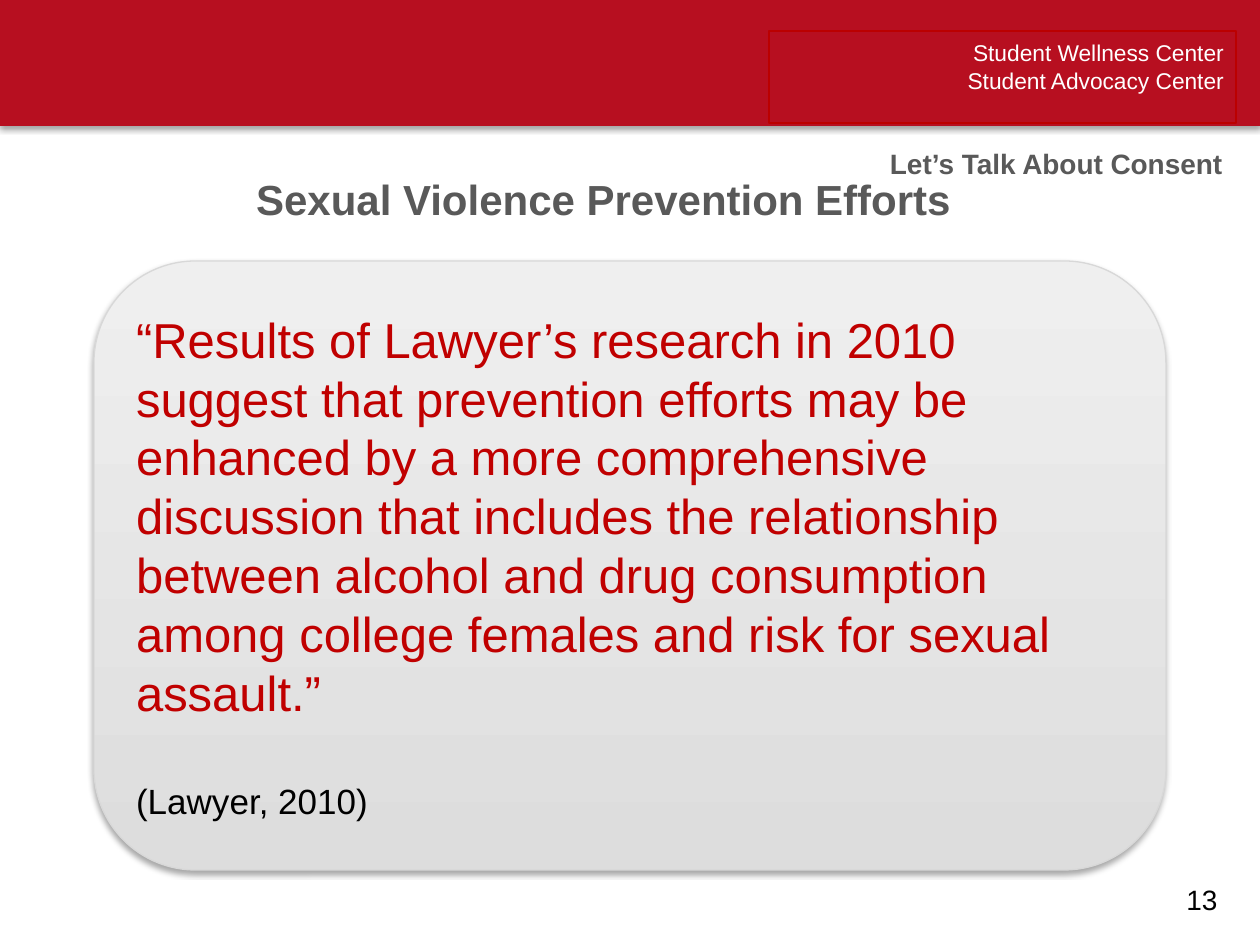
from lxml.etree import SubElement
from pptx import Presentation
from pptx.dml.color import RGBColor
from pptx.enum.shapes import MSO_SHAPE
from pptx.enum.text import MSO_ANCHOR, PP_ALIGN
from pptx.oxml.ns import qn
from pptx.util import Inches, Pt

SCALE = Inches(1) / 126
RED = RGBColor(0xB7, 0x0F, 0x20)
EDGE = RGBColor(0xBB, 0x00, 0x00)
QUOTE = RGBColor(0xC0, 0x00, 0x00)
GRAY = RGBColor(0x59, 0x59, 0x59)
RIM = RGBColor(0xD8, 0xD8, 0xD8)
DARK = RGBColor(0xDD, 0xDD, 0xDD)
LIGHT = RGBColor(0xEF, 0xEF, 0xEF)
WHITE = RGBColor(0xFF, 0xFF, 0xFF)
BLACK = RGBColor(0x00, 0x00, 0x00)


class Deck:
    face = "Arial"

    def __init__(self):
        self.show = Presentation()
        self.show.slide_width, self.show.slide_height = self.emu(1260, 945)
        self.slide = self.show.slides.add_slide(self.show.slide_layouts[6])

    def emu(self, *sizes):
        return [round(size * SCALE) for size in sizes]

    def style(self, para, size, color, bold=False, align=PP_ALIGN.LEFT, pitch=None):
        para.alignment = align
        if pitch:
            para.line_spacing = Pt(pitch)
        for run in para.runs:
            font = run.font
            font.name, font.size, font.bold = self.face, Pt(size), bold
            font.color.rgb = color

    def shape(self, kind, box, line=None):
        item = self.slide.shapes.add_shape(kind, *self.emu(*box))
        item.shadow.inherit = False
        item.fill.background()
        if line is None:
            item.line.fill.background()
        else:
            item.line.color.rgb = line
            item.line.width = Pt(0.75)
        return item

    def shade(self, item):
        effects = item._element.spPr.find(qn("a:effectLst"))
        outer = SubElement(effects, qn("a:outerShdw"), blurRad=str(Pt(3.1)),
                           dist=str(Pt(1.8)), dir="5400000", rotWithShape="0")
        color = SubElement(outer, qn("a:srgbClr"), val="000000")
        SubElement(color, qn("a:alpha"), val="35000")

    def band(self, box, color):
        item = self.shape(MSO_SHAPE.RECTANGLE, box)
        item.fill.solid()
        item.fill.fore_color.rgb = color
        self.shade(item)

    def label(self, box, text, size, color, line, align, bold=False):
        item = self.shape(MSO_SHAPE.RECTANGLE, box, line)
        frame = item.text_frame
        frame.word_wrap = True
        frame.vertical_anchor = MSO_ANCHOR.TOP
        frame.text = text
        for para in frame.paragraphs:
            self.style(para, size, color, bold, align, 16.4)

    def panel(self, box, quote, source):
        item = self.shape(MSO_SHAPE.ROUNDED_RECTANGLE, box, RIM)
        item.fill.gradient()
        item.fill.gradient_angle = 90
        for stop, color in zip(item.fill.gradient_stops, (DARK, LIGHT)):
            stop.color.rgb = color
        self.shade(item)
        frame = item.text_frame
        frame.word_wrap = True
        frame.vertical_anchor = MSO_ANCHOR.MIDDLE
        frame.text = f"{quote}\n{source}"
        first, last = frame.paragraphs
        self.style(first, 28, QUOTE, pitch=33.6)
        self.style(last, 20, BLACK, pitch=24)
        last.space_before = Pt(33.6)

    def number(self, box, text):
        frame = self.slide.shapes.add_textbox(*self.emu(*box)).text_frame
        frame.word_wrap = False
        frame.text = text
        self.style(frame.paragraphs[0], 16, BLACK)


def main():
    deck = Deck()
    deck.band((0, 0, 1260, 126), RED)
    deck.number((1174, 876, 60, 47), "13")
    deck.label((769, 31, 467, 92), "Student Wellness Center\nStudent Advocacy Center",
               13, WHITE, EDGE, PP_ALIGN.RIGHT)
    deck.label((595, 145, 640, 88), "Let’s Talk About Consent",
               16, GRAY, WHITE, PP_ALIGN.RIGHT, True)
    deck.panel((94, 261, 1072, 609),
               "“Results of Lawyer’s research in 2010 suggest that prevention efforts "
               "may be enhanced by a more comprehensive discussion that includes the "
               "relationship between alcohol and drug consumption among college "
               "females and risk for sexual assault.”",
               "(Lawyer, 2010)")
    deck.label((126, 189, 955, 53), "Sexual Violence Prevention Efforts",
               24, GRAY, WHITE, PP_ALIGN.CENTER, True)
    deck.show.save("out.pptx")


if __name__ == "__main__":
    main()
